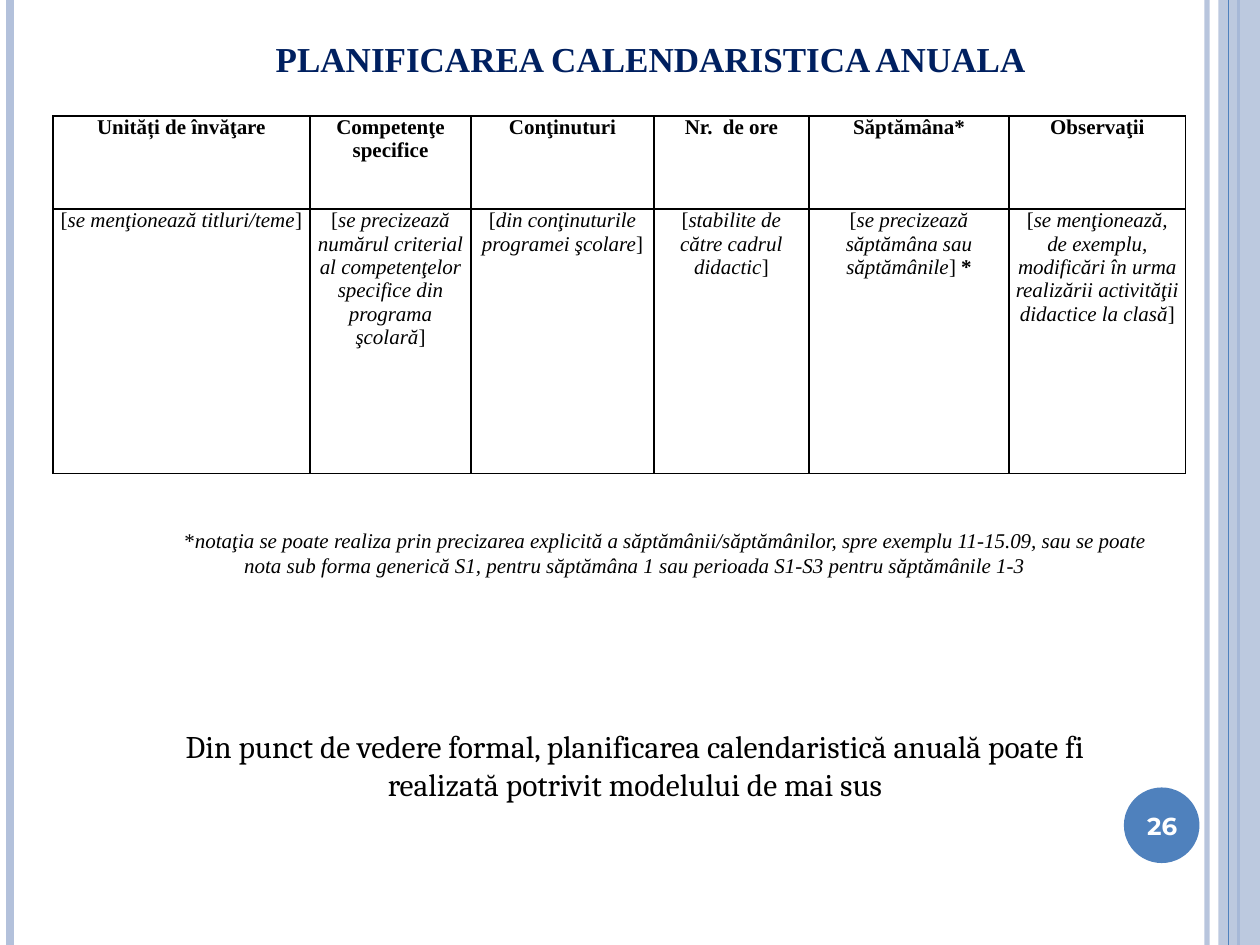
import pptx
import pptx.util
import pptx.oxml
import pptx.oxml.ns
from pptx.dml.color import RGBColor
from pptx.enum.shapes import MSO_CONNECTOR, MSO_SHAPE
from pptx.enum.text import MSO_ANCHOR, PP_ALIGN
from pptx.util import Inches, Pt

BLACK = RGBColor(0x00, 0x00, 0x00)
WHITE = RGBColor(0xFF, 0xFF, 0xFF)
NAVY = RGBColor(0x00, 0x20, 0x60)
BLUE = RGBColor(0x4F, 0x81, 0xBD)
PALE = RGBColor(0xB3, 0xC1, 0xDB)
SERIF = "Times New Roman"

# Content
TITLE = "PLANIFICAREA CALENDARISTICA ANUALA"
# header, bracketed hint, bold mark after the hint, column width
COLUMNS = [
    ("Unități de învăţare", "se menţionează titluri/teme", "", 2.04),
    ("Competenţe specifice", "se precizează numărul criterial al competenţelor "
     "specifice din programa şcolară", "", 1.28),
    ("Conţinuturi", "din conţinuturile programei şcolare", "", 1.45),
    ("Nr.  de ore", "stabilite de către cadrul didactic", "", 1.23),
    ("Săptămâna*", "se precizează săptămâna sau săptămânile", " *", 1.59),
    ("Observaţii", "se menţionează, de exemplu, modificări în urma realizării "
     "activităţii didactice la clasă", "", 1.4),
]
ROW_HEIGHTS = [0.74, 2.1]
NOTE = ("notaţia se poate realiza prin precizarea explicită a săptămânii/săptămânilor, "
        "spre exemplu 11-15.09, sau se poate nota sub forma generică S1, pentru "
        "săptămâna 1 sau perioada S1-S3 pentru săptămânile 1-3")
CLOSING = ("Din punct de vedere formal, planificarea calendaristică anuală poate fi "
           "realizată potrivit modelului de mai sus")
PAGE = "26"
# x, width in points, colour, opacity in percent
RULES_BEHIND = [(9.58, 3, PALE, 93), (0.08, 4.5, PALE, 100), (9.83, 1.5, BLUE, 100)]
RULES_FRONT = [(9.75, 0.75, BLUE, 100)]


def add_text(p, text, size=12, font=SERIF, color=BLACK, bold=False, italic=False):
    p.alignment = PP_ALIGN.CENTER
    r = p.add_run()
    r.text = text
    r.font.size, r.font.name = Pt(size), font
    r.font.bold, r.font.italic = bold, italic
    r.font.color.rgb = color


def add_box(s, box, anchor=MSO_ANCHOR.TOP):
    tf = s.shapes.add_textbox(*map(Inches, box)).text_frame
    tf.word_wrap = True
    tf.vertical_anchor = anchor
    return tf.paragraphs[0]


def set_alpha(parent, percent):
    clr = parent.find(".//" + pptx.oxml.ns.qn("a:srgbClr"))
    alpha = clr.makeelement(pptx.oxml.ns.qn("a:alpha"), {"val": str(percent * 1000)})
    clr.append(alpha)


def add_rules(s, rules):
    for x, width, color, opacity in rules:
        c = s.shapes.add_connector(MSO_CONNECTOR.STRAIGHT, Inches(x), 0, Inches(x), Inches(7.5))
        c.line.width = Pt(width)
        c.line.color.rgb = color
        sp_pr = c._element.spPr
        if opacity < 100:
            set_alpha(sp_pr, opacity)
        sp_pr.append(sp_pr.makeelement(pptx.oxml.ns.qn("a:effectLst"), {}))


def add_shape(s, kind, box, color):
    sp = s.shapes.add_shape(kind, *map(Inches, box))
    sp.shadow.inherit = False
    sp.fill.solid()
    sp.fill.fore_color.rgb = color
    sp.line.fill.background()
    return sp


def format_cell(cell):
    cell.fill.background()
    cell.margin_left = cell.margin_right = Inches(0.05)
    cell.margin_top = cell.margin_bottom = 0
    tc_pr = cell._tc.get_or_add_tcPr()
    for i, side in enumerate(("lnL", "lnR", "lnT", "lnB")):
        tc_pr.insert(i, pptx.oxml.parse_xml(
            f'<a:{side} {pptx.oxml.ns.nsdecls("a")} w="12700"><a:solidFill>'
            f'<a:srgbClr val="{BLACK}"/></a:solidFill></a:{side}>'))


def main():
    prs = pptx.Presentation()
    prs.slide_width, prs.slide_height = Inches(10), Inches(7.5)
    s = prs.slides.add_slide(prs.slide_layouts[5])

    # Side rules, band and page number
    add_rules(s, RULES_BEHIND)
    band = add_shape(s, MSO_SHAPE.RECTANGLE, (9.67, 0, 0.33, 7.5), PALE)
    set_alpha(band._element.spPr, 87)
    add_rules(s, RULES_FRONT)
    add_shape(s, MSO_SHAPE.OVAL, (8.92, 6.25, 0.6, 0.6), BLUE)
    p = add_box(s, (8.89, 6.27, 0.67, 0.57), MSO_ANCHOR.MIDDLE)
    add_text(p, PAGE, size=14, font="Montserrat", color=WHITE, bold=True)

    # Title
    title = s.shapes.title
    title.left, title.top, title.width, title.height = map(Inches, (1.5, 0.25, 7.33, 0.44))
    title.text_frame.vertical_anchor = MSO_ANCHOR.TOP
    add_text(title.text_frame.paragraphs[0], TITLE, size=20, color=NAVY, bold=True)

    # Planning table
    table = s.shapes.add_table(len(ROW_HEIGHTS), len(COLUMNS), Inches(0.42), Inches(0.92),
                               Inches(9), Inches(sum(ROW_HEIGHTS))).table
    table.first_row = table.horz_banding = False
    for row, height in zip(table.rows, ROW_HEIGHTS):
        row.height = Inches(height)
    for i, (header, hint, mark, width) in enumerate(COLUMNS):
        table.columns[i].width = Inches(width)
        head, body = table.cell(0, i), table.cell(1, i)
        format_cell(head)
        format_cell(body)
        add_text(head.text_frame.paragraphs[0], header, bold=True)
        p = body.text_frame.paragraphs[0]
        add_text(p, "[")
        add_text(p, hint, italic=True)
        add_text(p, "]")
        if mark:
            add_text(p, mark, bold=True)

    # Footnote and closing remark
    p = add_box(s, (0.75, 4.13, 8.58, 0.51), MSO_ANCHOR.MIDDLE)
    p._p.get_or_add_pPr().set("indent", str(Inches(0.49)))
    add_text(p, "*")
    add_text(p, NOTE, italic=True)
    p = add_box(s, (1, 5.72, 8.08, 0.71))
    add_text(p, CLOSING, size=18, font="Cambria")

    prs.save("out.pptx")


if __name__ == "__main__":
    main()
